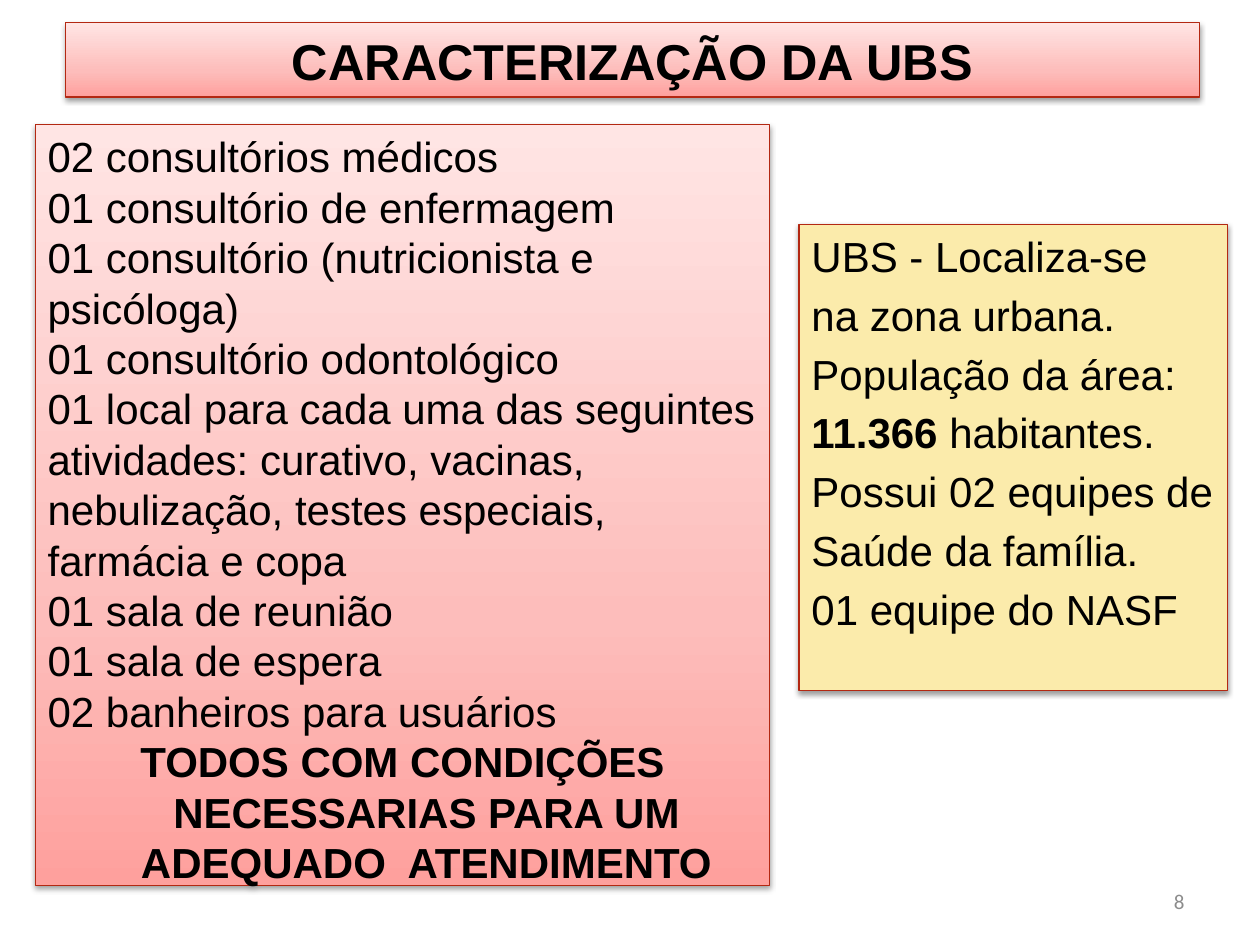
from pptx import Presentation
from pptx.dml.color import RGBColor
from pptx.enum.shapes import MSO_SHAPE
from pptx.enum.text import MSO_ANCHOR, MSO_AUTO_SIZE, PP_ALIGN
from pptx.oxml import parse_xml
from pptx.oxml.ns import nsdecls, qn
from pptx.util import Inches, Pt

LEFT, MID, RIGHT, JUST = PP_ALIGN.LEFT, PP_ALIGN.CENTER, PP_ALIGN.RIGHT, PP_ALIGN.JUSTIFY
TOP, CORE = MSO_ANCHOR.TOP, MSO_ANCHOR.MIDDLE
NONE, RECT = MSO_AUTO_SIZE.NONE, MSO_SHAPE.RECTANGLE

HUE = {"ink": "000000", "edge": "B32812", "sand": "FBEBAB", "gray": "8C8C8C"}
FADE = [(0, "FEA09D"), (35, "FDBDBB"), (100, "FFE5E4")]
HANG = 0.38

TITLE = [dict(runs=[("CARACTERIZAÇÃO DA UBS", True)], align=MID)]
ROOMS = [
    dict(runs=[(text, bold)], align=align, hang=hang)
    for text, bold, align, hang in [
        ("02 consultórios médicos", False, LEFT, 0),
        ("01 consultório de enfermagem", False, LEFT, 0),
        ("01 consultório (nutricionista e", False, LEFT, HANG),
        ("psicóloga)", False, LEFT, HANG),
        ("01 consultório odontológico", False, LEFT, 0),
        ("01 local para cada uma das seguintes atividades: curativo, vacinas, "
         "nebulização, testes especiais, farmácia e copa", False, LEFT, 0),
        ("01 sala de reunião", False, LEFT, 0),
        ("01 sala de espera", False, LEFT, 0),
        ("02 banheiros para usuários", False, LEFT, 0),
        ("TODOS COM CONDIÇÕES NECESSARIAS PARA UM ADEQUADO  ATENDIMENTO", True, MID, HANG),
    ]
]
AREA = [
    dict(runs=runs, align=JUST, hang=HANG, gap=4.8)
    for runs in [
        [("UBS - Localiza-se", False)],
        [("na zona urbana.", False)],
        [("População da área:", False)],
        [("11.366 ", True), ("habitantes.", False)],
        [("Possui 02 equipes de", False)],
        [("Saúde da família.", False)],
        [("01 equipe do NASF", False)],
    ]
]
PAGE = [dict(runs=[("8", False)], align=RIGHT)]


def place(shape, box):
    for name, size in zip(("left", "top", "width", "height"), box):
        setattr(shape, name, Inches(size))


def paint(shape, fill=None):
    if fill:
        shape.fill.solid()
        shape.fill.fore_color.rgb = RGBColor.from_string(HUE[fill])
    else:
        shape.fill.gradient()
        shape.fill.gradient_angle = 90
        stops = shape._element.spPr.find(".//" + qn("a:gsLst"))
        for stop in list(stops):
            stops.remove(stop)
        for pos, tone in FADE:
            stops.append(parse_xml(
                f'<a:gs {nsdecls("a")} pos="{pos * 1000}"><a:srgbClr val="{tone}"/></a:gs>'))
    shape.line.color.rgb = RGBColor.from_string(HUE["edge"])
    shape.line.width = Pt(0.75)
    shape.shadow.inherit = False
    shape._element.spPr.find(qn("a:effectLst")).append(parse_xml(
        f'<a:outerShdw {nsdecls("a")} blurRad="{Pt(3.1)}" dist="{Pt(1.6)}" dir="5400000" '
        'rotWithShape="0"><a:srgbClr val="000000"><a:alpha val="38000"/></a:srgbClr></a:outerShdw>'))


def write(shape, paras, size=24, face="Arial", tone="ink", anchor=TOP):
    frame = shape.text_frame
    form = dict(word_wrap=True, auto_size=NONE, vertical_anchor=anchor)
    for name, value in form.items():
        setattr(frame, name, value)
    for i, item in enumerate(paras):
        para = frame.paragraphs[0] if i == 0 else frame.add_paragraph()
        para.alignment = item["align"]
        para.space_before = Pt(item.get("gap", 0))
        hang = Inches(item.get("hang", 0))
        props = para._p.get_or_add_pPr()
        props.set("marL", str(hang))
        props.set("indent", str(-hang))
        props.append(parse_xml(f'<a:buNone {nsdecls("a")}/>'))
        for text, bold in item["runs"]:
            run = para.add_run()
            run.text = text
            for name, value in dict(name=face, size=Pt(size), bold=bold).items():
                setattr(run.font, name, value)
            run.font.color.rgb = RGBColor.from_string(HUE[tone])


deck = Presentation()
deck.slide_width, deck.slide_height = Inches(10), Inches(7.5)
slide = deck.slides.add_slide(deck.slide_layouts[1])

title, area = slide.shapes.title, slide.placeholders[1]
place(title, (0.52, 0.18, 9, 0.59))
paint(title)
write(title, TITLE, size=28.8, anchor=CORE)

place(area, (6.34, 1.78, 3.4, 3.7))
paint(area, "sand")
write(area, AREA)

page = slide.shapes.add_textbox(*map(Inches, (7.17, 6.95, 2.33, 0.4)))
write(page, PAGE, size=12, face="Calibri", tone="gray", anchor=CORE)

rooms = slide.shapes.add_shape(RECT, *map(Inches, (0.28, 0.99, 5.83, 6.04)))
paint(rooms)
write(rooms, ROOMS)

deck.save("out.pptx")
